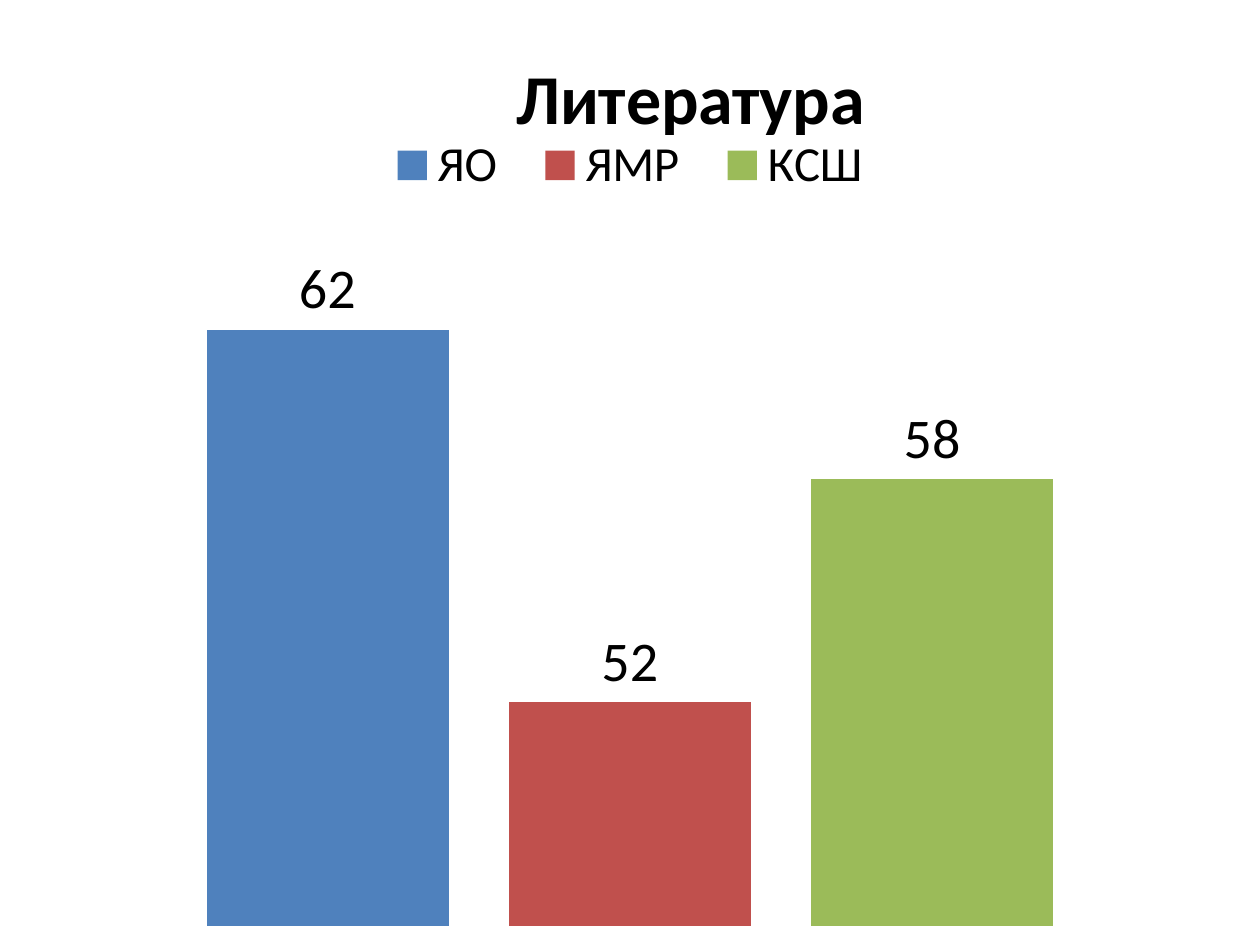
from lxml import etree
from pptx import Presentation
from pptx.chart.data import CategoryChartData
from pptx.dml.color import RGBColor
from pptx.enum.chart import XL_CHART_TYPE, XL_LABEL_POSITION, XL_LEGEND_POSITION
from pptx.oxml.ns import qn
from pptx.util import Inches, Pt

COLUMNS = XL_CHART_TYPE.COLUMN_CLUSTERED
OUTSIDE_END = XL_LABEL_POSITION.OUTSIDE_END
LEGEND_TOP = XL_LEGEND_POSITION.TOP

# Content
TITLE = "Литература"
CATEGORY = "1"
SCORES = [("ЯО", 62, "4F81BD"), ("ЯМР", 52, "C0504D"), ("КСШ", 58, "9BBB59")]
AXIS_RANGE = (46, 64)
SLIDE_SIZE = (Inches(10), Inches(7.5))


def color(value):
    return RGBColor.from_string(value)


def style(font, size, bold=False):
    font.name = "Calibri"
    font.size = Pt(size)
    font.bold = bold
    font.color.rgb = color("000000")


def write(frame, text, **text_format):
    run = frame.paragraphs[0].add_run()
    run.text = text
    style(run.font, **text_format)


def place(element, **settings):
    """Set a manual layout, in fractions of the chart, on a chart part."""
    layout = element.find(qn("c:layout"))
    if layout is None:
        layout = etree.Element(qn("c:layout"))
        element.find(qn("c:overlay")).addprevious(layout)
    for child in list(layout):
        layout.remove(child)
    manual = etree.SubElement(layout, qn("c:manualLayout"))
    for name, value in settings.items():
        etree.SubElement(manual, qn(f"c:{name}")).set("val", str(value))


presentation = Presentation()
presentation.slide_width, presentation.slide_height = SLIDE_SIZE
slide = presentation.slides.add_slide(presentation.slide_layouts[6])

# Chart
data = CategoryChartData()
data.categories = [CATEGORY]
for name, score, _ in SCORES:
    data.add_series(name, [score])
chart = slide.shapes.add_chart(COLUMNS, 0, 0, *SLIDE_SIZE, data).chart
style(chart.font, size=10)

# Title
chart.has_title = True
write(chart.chart_title.text_frame, TITLE, size=40, bold=True)
chart.chart_title.include_in_layout = False
place(chart.chart_title._element, xMode="edge", yMode="edge", x=0.4, y=0.04)

# Legend
chart.has_legend = True
chart.legend.position = LEGEND_TOP
chart.legend.include_in_layout = False
style(chart.legend.font, size=28)
place(chart.legend._element, xMode="edge", yMode="edge",
      x=0.29, y=0.12, w=0.42, h=0.11)

# Hidden axes
chart.value_axis.minimum_scale, chart.value_axis.maximum_scale = AXIS_RANGE
chart.value_axis.has_major_gridlines = False
for axis in (chart.category_axis, chart.value_axis):
    axis.visible = False

# Columns and their labels
plot = chart.plots[0]
plot.vary_by_categories = False
plot.gap_width = 150
plot.overlap = -25
for series, (_, _, fill) in zip(plot.series, SCORES):
    series.format.fill.solid()
    series.format.fill.fore_color.rgb = color(fill)
    labels = series.data_labels
    labels.show_value = True
    labels.position = OUTSIDE_END
    style(labels.font, size=32)

# Plot area
plot_area = chart._chartSpace.chart.plotArea
if plot_area.find(qn("c:layout")) is None:
    plot_area.insert(0, etree.Element(qn("c:layout")))
place(plot_area, layoutTarget="inner", xMode="edge", yMode="edge",
      x=0.02, y=0.27, w=0.96, h=0.71)

presentation.save("out.pptx")
